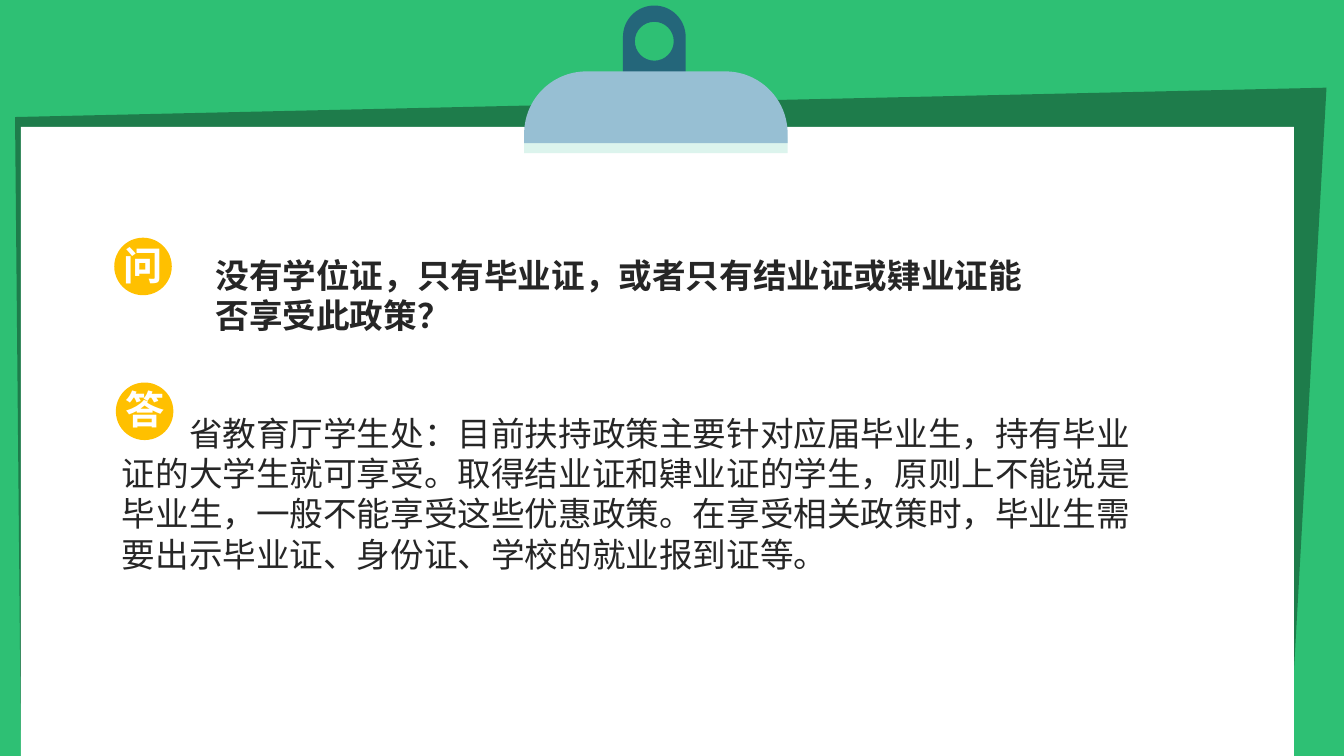
from lxml import etree
from pptx import Presentation
from pptx import util as u
from pptx.dml.color import RGBColor
from pptx.enum import shapes, text
from pptx.oxml import ns

FONT = "Noto Sans CJK SC"
ROUND = 0.5523  # control-point distance of a quarter circle
QUESTION = "没有学位证，只有毕业证，或者只有结业证或肄业证能否享受此政策？"
ANSWER = ("省教育厅学生处：目前扶持政策主要针对应届毕业生，持有毕业证的大学生就可享受。"
          "取得结业证和肄业证的学生，原则上不能说是毕业生，一般不能享受这些优惠政策。"
          "在享受相关政策时，毕业生需要出示毕业证、身份证、学校的就业报到证等。")


def set_all(target, values):
    for name, value in values.items():
        setattr(target, name, value)


def paint(shape, color):
    shape.shadow.inherit = False
    shape.fill.solid()
    shape.fill.fore_color.rgb = RGBColor.from_string(color)
    shape.line.fill.background()


def quarter(start, corner, end):
    """Three points of the curve that rounds a corner."""
    return [tuple(p + (c - p) * ROUND for p, c in zip(point, corner))
            for point in (start, end)] + [end]


def outline(page, color, *contours):
    """Draw contours in cm; a list of three points among them is a curve."""
    builder, curve_starts, position = None, [], 0
    for contour in contours:
        points = []
        for step in contour:
            if isinstance(step, list):
                curve_starts.append(position + len(points))
                points += step
            else:
                points.append(step)
        position += len(points) + 1  # one more for the close
        points = [(u.Cm(x), u.Cm(y)) for x, y in points]
        if builder is None:
            builder = page.shapes.build_freeform(*points[0])
        else:
            builder.move_to(*points[0])
        builder.add_line_segments(points[1:], close=True)
    shape = builder.convert_to_shape()
    paint(shape, color)
    # Turn each marked run of three lines into a curve
    steps = list(next(shape.element.iter(ns.qn("a:path"))))
    for start in curve_starts:
        curve = etree.Element(ns.qn("a:cubicBezTo"))
        steps[start].addprevious(curve)
        for line in steps[start:start + 3]:
            curve.append(line[0])
            line.getparent().remove(line)


def add_board(page, left, top, width, height):
    bottom = top + height
    # Slanted backing behind the paper
    outline(page, "1E7C4B", [(left - 0.15, top - 0.25), (left + width + 0.82, top - 0.99),
                             (left + width - 0.12, bottom), (left, bottom)])
    paper = page.shapes.add_shape(shapes.MSO_SHAPE.RECTANGLE,
                                  *map(u.Cm, (left, top, width, height)))
    paint(paper, "FFFFFF")


def arch(left, right, top, bottom, radius):
    """A rectangle with both upper corners rounded."""
    side = top + radius
    return [(left, bottom), (left, side),
            quarter((left, side), (left, top), (left + radius, top)),
            (right - radius, top),
            quarter((right - radius, top), (right, top), (right, side)),
            (right, bottom)]


def circle(x, y, radius):
    left, right, top, bottom = x - radius, x + radius, y - radius, y + radius
    return [(x, top),
            quarter((x, top), (right, top), (right, y)),
            quarter((right, y), (right, bottom), (x, bottom)),
            quarter((x, bottom), (left, bottom), (left, y)),
            quarter((left, y), (left, top), (x, top))]


def add_clip(page, left, top, width, height):
    # Ring tab with its hole
    radius, middle = 0.79, left + width / 2 - 0.04
    outline(page, "24667A", arch(middle - radius, middle + radius, top, top + 2.36, radius),
            circle(middle, top + 0.9, 0.49))
    # Light edge below, then the plate
    for color, drop in (("DCF4ED", 0.25), ("97BFD3", 0)):
        outline(page, color, arch(left, left + width, top + 1.66 + drop,
                                  top + height - 0.25 + drop, 1.57))


def add_badge(page, left, top, size, letter):
    badge = page.shapes.add_shape(shapes.MSO_SHAPE.OVAL, *map(u.Cm, (left, top, size, size)))
    paint(badge, "FFC000")
    write(badge, letter, 28, "FFFFFF", True,
          {"margin_left": 0, "margin_right": 0, "margin_top": 0, "margin_bottom": u.Cm(0.1),
           "vertical_anchor": text.MSO_ANCHOR.MIDDLE, "word_wrap": False},
          {"alignment": text.PP_ALIGN.CENTER})


def write(shape, words, size, color, bold, frame_values, para_values):
    frame = shape.text_frame
    set_all(frame, {"word_wrap": True, "auto_size": text.MSO_AUTO_SIZE.NONE, **frame_values})
    para = frame.paragraphs[0]
    set_all(para, para_values)
    span = para.add_run()
    span.text = words
    set_all(span.font, {"name": FONT, "size": u.Pt(size), "bold": bold})
    span.font.color.rgb = RGBColor.from_string(color)
    east_asian = etree.SubElement(span.font._element, ns.qn("a:ea"))
    east_asian.set("typeface", FONT)
    return para


def add_passage(page, holder, left, top, width, height, words, bold, inset, indent):
    set_all(holder, dict(zip(("left", "top", "width", "height"),
                             map(u.Cm, (left, top, width, height)))))
    page.shapes.element.append(holder.element)  # bring in front of the paper
    para = write(holder, words, 24, "262626", bold,
                 {"margin_left": u.Cm(0.25), "margin_right": u.Cm(0.25),
                  "margin_top": u.Cm(inset), "margin_bottom": u.Cm(0.13),
                  "vertical_anchor": text.MSO_ANCHOR.TOP},
                 {"alignment": text.PP_ALIGN.LEFT, "line_spacing": u.Pt(28.8),
                  "space_before": u.Pt(0)})
    # No bullet; only the first line is indented
    properties = para._p.get_or_add_pPr()
    properties.set("marL", "0")
    properties.set("indent", str(u.Pt(indent)))
    etree.SubElement(properties, ns.qn("a:buNone"))


def build_answer_slide(deck):
    page = deck.slides.add_slide(deck.slide_layouts[1])
    page.background.fill.solid()
    page.background.fill.fore_color.rgb = RGBColor.from_string("2EC074")
    add_board(page, 0.53, 3.2, 32.08, 15.85)
    add_clip(page, 13.21, 0.14, 6.64, 3.72)
    title, body = page.placeholders
    add_passage(page, body, 2.82, 9.27, 26.42, 5.38, ANSWER, False, 1.13, 48)
    add_passage(page, title, 5.18, 6.3, 21.29, 3.33, QUESTION, True, 0.12, 0)
    for left, top, letter in ((2.88, 5.99, "问"), (2.92, 9.64, "答")):
        add_badge(page, left, top, 1.45, letter)


def main():
    deck = Presentation()
    set_all(deck, {"slide_width": u.Cm(33.87), "slide_height": u.Cm(19.05)})
    build_answer_slide(deck)
    deck.save("out.pptx")


if __name__ == "__main__":
    main()
